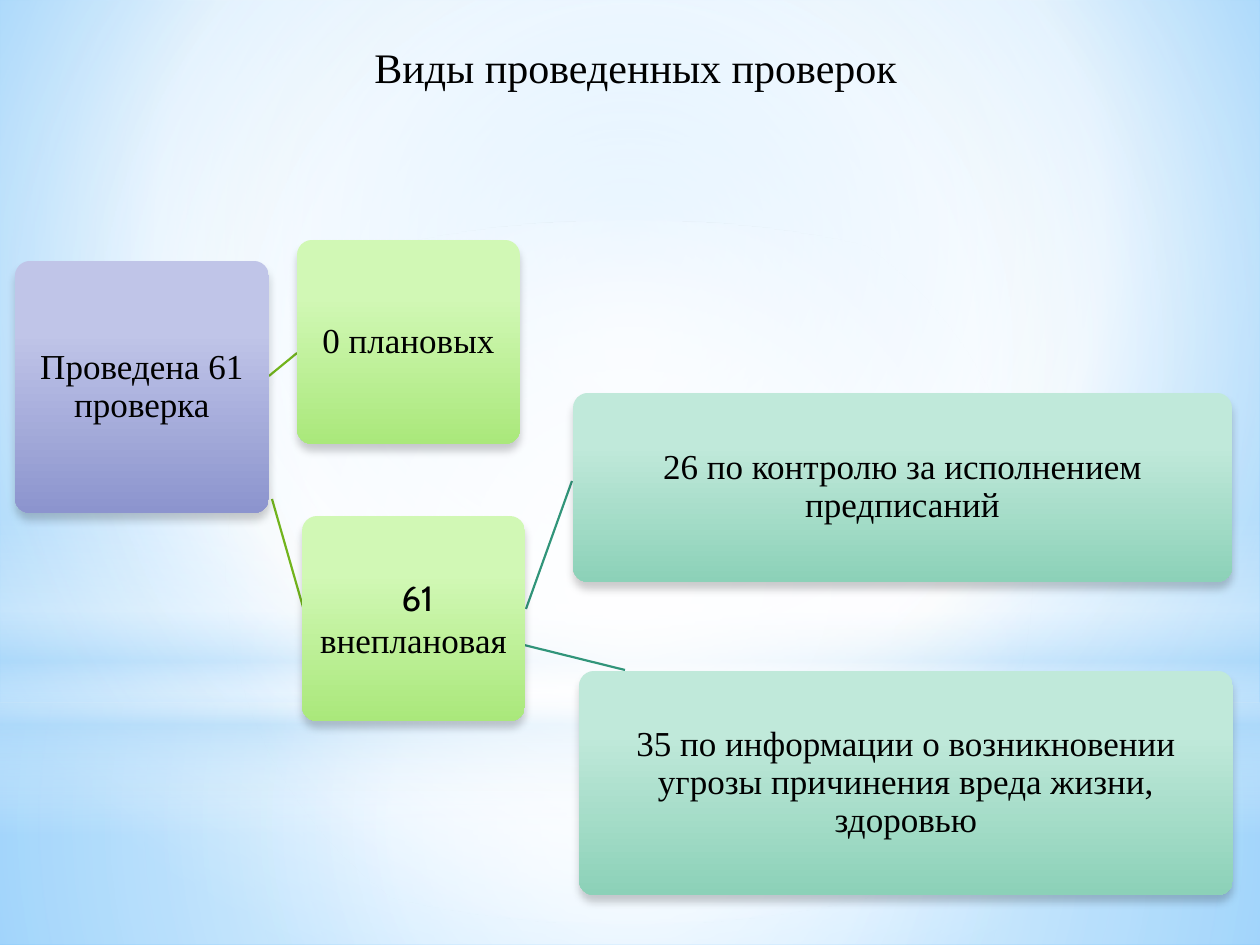
from dataclasses import dataclass

from lxml import etree
from pptx import Presentation
from pptx.dml.color import RGBColor
from pptx.enum import shapes, text
from pptx.oxml import ns
from pptx.util import Emu, Pt

EMU_PER_PX = 914400 / 126
SLIDE_WIDTH, SLIDE_HEIGHT = 1260, 945
CORNER = 15

BLACK = RGBColor(0x00, 0x00, 0x00)
WHITE = RGBColor(0xFF, 0xFF, 0xFF)
MIST = RGBColor(0xB4, 0xDC, 0xFA)
SKY = RGBColor(0x9E, 0xD5, 0xFF)
AZURE = RGBColor(0x5B, 0xB9, 0xFF)
LILAC = RGBColor(0xC0, 0xC5, 0xE8)
VIOLET = RGBColor(0x8C, 0x94, 0xCE)
PALE_GREEN = RGBColor(0xD1, 0xF8, 0xB5)
GREEN = RGBColor(0xAA, 0xE8, 0x7B)
PALE_TEAL = RGBColor(0xC0, 0xE9, 0xDA)
TEAL = RGBColor(0x8C, 0xD1, 0xB8)
GREEN_LINE = RGBColor(0x72, 0xB4, 0x1D)
TEAL_LINE = RGBColor(0x31, 0x95, 0x7A)

SERIF = "Times New Roman"
CABIN = "Cabin"
CENTRE = (50, 50, 50, 50)


@dataclass
class Stop:
    position: int
    color: RGBColor
    opacity: int = 100


@dataclass
class Layer:
    kind: shapes.MSO_SHAPE
    box: tuple[int, int, int, int]
    stops: list[Stop]
    focus: tuple[int, int, int, int] | None = CENTRE


@dataclass
class Card:
    box: tuple[int, int, int, int]
    colors: tuple[RGBColor, RGBColor]
    runs: list[tuple[str, str]]
    inset: int = 5
    line_spacing: float = 0.9


@dataclass
class Link:
    start: tuple[int, int]
    end: tuple[int, int]
    color: RGBColor


LAYERS = [
    Layer(shapes.MSO_SHAPE.RECTANGLE, (0, 703, 1260, 242),
          [Stop(0, WHITE, 91), Stop(37, WHITE, 76), Stop(100, MIST, 79)]),
    Layer(shapes.MSO_SHAPE.RECTANGLE, (0, 0, 1260, 703),
          [Stop(0, WHITE, 89), Stop(48, WHITE, 62), Stop(100, MIST, 79)]),
    Layer(shapes.MSO_SHAPE.RECTANGLE, (0, 519, 1260, 315),
          [Stop(0, WHITE, 0), Stop(29, WHITE, 30), Stop(45, MIST, 40),
           Stop(55, WHITE, 26), Stop(65, MIST, 60), Stop(100, WHITE, 0)], None),
    Layer(shapes.MSO_SHAPE.OVAL, (0, 221, 1260, 703),
          [Stop(0, WHITE), Stop(56, WHITE, 0)]),
]

CARDS = [
    Card((15, 261, 254, 252), (LILAC, VIOLET), [("Проведена 61 проверка", SERIF)]),
    Card((297, 240, 223, 204), (PALE_GREEN, GREEN), [("0 плановых", SERIF)]),
    Card((302, 516, 223, 205), (PALE_GREEN, GREEN),
         [(" 61", CABIN), (" внеплановая", SERIF)], line_spacing=1.0),
    Card((573, 393, 659, 189), (PALE_TEAL, TEAL),
         [("26 по контролю за исполнением предписаний", SERIF)], 6),
    Card((579, 671, 654, 224), (PALE_TEAL, TEAL),
         [("35 по информации о возникновении угрозы причинения вреда жизни, здоровью",
           SERIF)], 6),
]

LINKS = [
    Link((269, 376), (297, 353), GREEN_LINE),
    Link((272, 499), (303, 607), GREEN_LINE),
    Link((526, 609), (572, 481), TEAL_LINE),
    Link((524, 645), (625, 670), TEAL_LINE),
]


def px(value: int) -> Emu:
    return Emu(round(value * EMU_PER_PX))


def add_element(parent, tag: str, **attributes):
    values = {name: str(value) for name, value in attributes.items()}
    return etree.SubElement(parent, ns.qn(tag), values)


def add_color(parent, color: RGBColor, opacity: int) -> None:
    element = add_element(parent, "a:srgbClr", val=color)
    if opacity < 100:
        add_element(element, "a:alpha", val=opacity * 1000)


def set_gradient(owner, properties, stops: list[Stop], focus=None) -> None:
    """Fill with a circular gradient around focus, or a vertical one without it."""
    owner.fill.background()
    gradient = etree.Element(ns.qn("a:gradFill"), rotWithShape="1")
    stop_list = add_element(gradient, "a:gsLst")
    for stop in stops:
        add_color(add_element(stop_list, "a:gs", pos=stop.position * 1000),
                  stop.color, stop.opacity)
    if focus:
        circle = add_element(gradient, "a:path", path="circle")
        sides = {side: inset * 1000 for side, inset in zip("ltrb", focus)}
        add_element(circle, "a:fillToRect", **sides)
    else:
        add_element(gradient, "a:lin", ang=90 * 60000, scaled=0)
    properties.replace(properties.find(ns.qn("a:noFill")), gradient)


def add_plain_shape(slide, kind, box):
    shape = slide.shapes.add_shape(kind, *map(px, box))
    shape.shadow.inherit = False
    shape.line.fill.background()
    return shape


def draw_layer(slide, layer: Layer) -> None:
    shape = add_plain_shape(slide, layer.kind, layer.box)
    set_gradient(shape, shape.element.spPr, layer.stops, layer.focus)


def format_run(run, font: str, size: int) -> None:
    run.font.name = font
    run.font.size = Pt(size)
    run.font.color.rgb = BLACK


def draw_card(slide, card: Card) -> None:
    shape = add_plain_shape(slide, shapes.MSO_SHAPE.ROUNDED_RECTANGLE, card.box)
    shape.adjustments[0] = CORNER / min(card.box[2:])
    light, dark = card.colors
    properties = shape.element.spPr
    set_gradient(shape, properties, [Stop(28, light), Stop(100, dark)])
    shadow = add_element(properties.find(ns.qn("a:effectLst")), "a:outerShdw",
                         blurRad=Pt(5), dist=Pt(4), dir=90 * 60000, rotWithShape=0)
    add_color(shadow, BLACK, 20)

    frame = shape.text_frame
    frame.word_wrap = True
    frame.vertical_anchor = text.MSO_ANCHOR.MIDDLE
    frame.margin_left = frame.margin_right = px(card.inset)
    frame.margin_top = frame.margin_bottom = px(card.inset)
    paragraph = frame.paragraphs[0]
    paragraph.alignment = text.PP_ALIGN.CENTER
    paragraph.line_spacing = card.line_spacing
    for words, font in card.runs:
        run = paragraph.add_run()
        run.text = words
        format_run(run, font, 20)


def draw_link(slide, link: Link) -> None:
    connector = slide.shapes.add_connector(
        shapes.MSO_CONNECTOR.STRAIGHT, *map(px, link.start + link.end))
    connector.line.color.rgb = link.color
    connector.line.width = Pt(1.25)
    add_element(connector.element.spPr, "a:effectLst")


def draw_title(slide) -> None:
    frame = slide.shapes.add_textbox(*map(px, (362, 35, 635, 63))).text_frame
    frame.word_wrap = True
    frame.text = "Виды проведенных проверок"
    format_run(frame.paragraphs[0].runs[0], SERIF, 24)


def main() -> None:
    presentation = Presentation()
    presentation.slide_width = px(SLIDE_WIDTH)
    presentation.slide_height = px(SLIDE_HEIGHT)
    slide = presentation.slides.add_slide(presentation.slide_layouts[6])

    # Backdrop
    background = slide.background
    background.fill.background()
    set_gradient(background, slide.element.find(".//" + ns.qn("p:bgPr")),
                 [Stop(0, SKY), Stop(60, WHITE), Stop(100, AZURE)], (20, 10, 20, 60))
    for layer in LAYERS:
        draw_layer(slide, layer)

    # Tree of inspections
    for link in LINKS:
        draw_link(slide, link)
    for card in CARDS:
        draw_card(slide, card)

    draw_title(slide)
    presentation.save("out.pptx")


if __name__ == "__main__":
    main()
